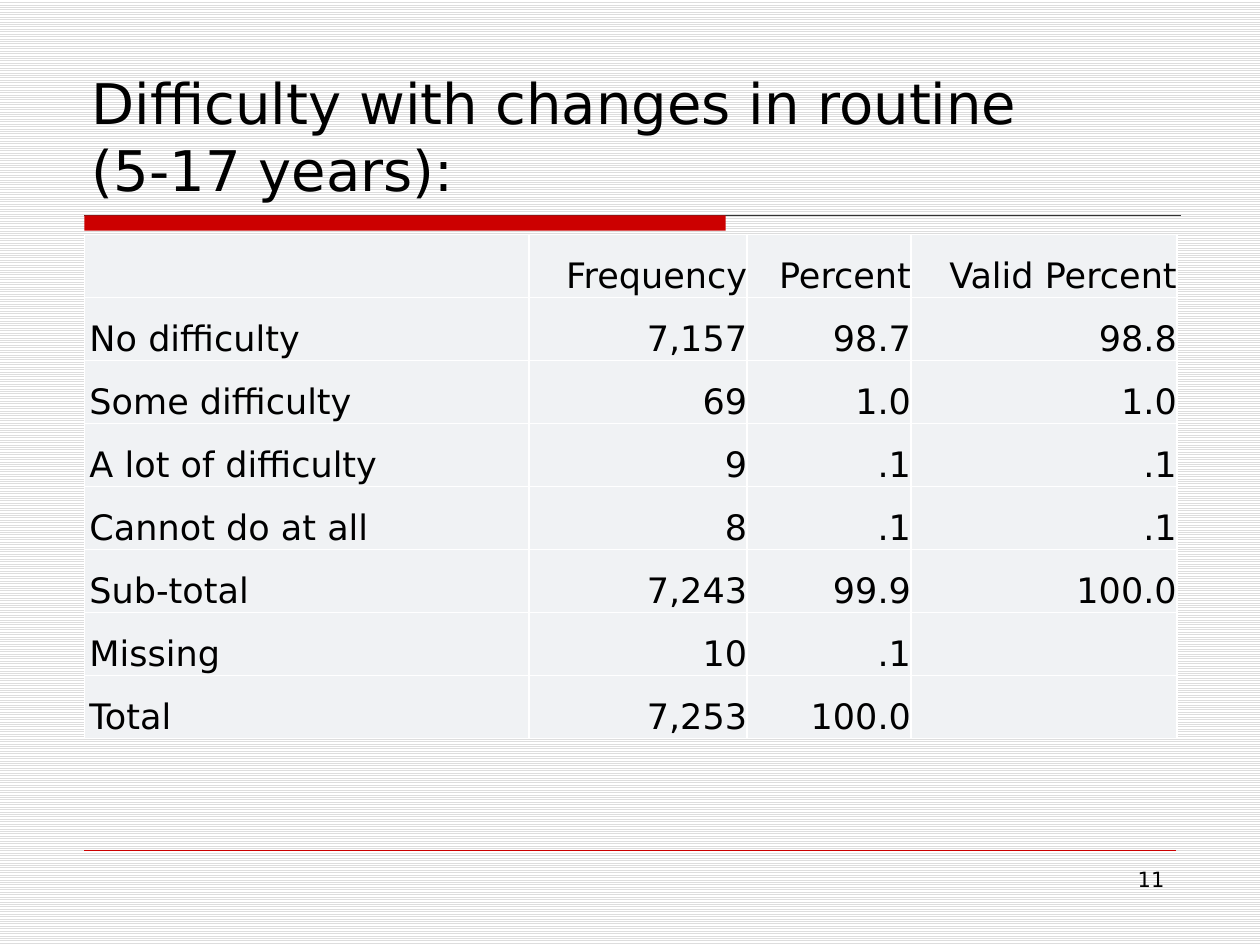
from lxml.etree import SubElement
from pptx import Presentation
from pptx.dml.color import RGBColor
from pptx.enum.dml import MSO_PATTERN
from pptx.enum.shapes import MSO_CONNECTOR, MSO_SHAPE
from pptx.enum.text import MSO_ANCHOR, PP_ALIGN
from pptx.oxml import parse_xml
from pptx.oxml.ns import nsdecls, qn
from pptx.util import Inches, Pt

HUES = {"red": "CC0000", "dark": "333333", "text": "000000", "cell": "F0F2F4",
        "edge": "FFFFFF", "weave": "DDDDDD", "page": "FFFFFF"}
RGB = {name: RGBColor.from_string(hue) for name, hue in HUES.items()}


def write(frame, words, size, form):
    """Put one paragraph in the frame and apply its paragraph format."""
    para = frame.paragraphs[0]
    para.text = words
    for key, value in form.items():
        setattr(para, key, value)
    for run in para.runs:
        for key, value in {"name": "DejaVu Sans", "size": Pt(size)}.items():
            setattr(run.font, key, value)
        run.font.color.rgb = RGB["text"]
    return para


deck = Presentation()
deck.slide_width, deck.slide_height = Inches(10), Inches(7.5)
slide = deck.slides.add_slide(deck.slide_layouts[6])
shapes = slide.shapes

back = slide.background.fill
back.patterned()
back.pattern = MSO_PATTERN.LIGHT_HORIZONTAL
back.fore_color.rgb, back.back_color.rgb = RGB["weave"], RGB["page"]

# Rules under the title and above the page number
for end, top, hue, width in [(9.37, 1.71, "dark", 0.75), (9.33, 6.75, "red", 0.25)]:
    rule = shapes.add_connector(MSO_CONNECTOR.STRAIGHT, Inches(0.67), Inches(top),
                                Inches(end), Inches(top))
    rule.line.color.rgb, rule.line.width = RGB[hue], Pt(width)
    SubElement(rule._element.spPr, qn("a:effectLst"))

bar = shapes.add_shape(MSO_SHAPE.RECTANGLE, Inches(0.67), Inches(1.71),
                       Inches(5.09), Inches(0.12))
bar.shadow.inherit = False
bar.fill.solid()
bar.fill.fore_color.rgb = RGB["red"]
bar.line.fill.background()

# Title and page number
for box, words, size, anchor, align in [
    ((0.63, 0.33, 9.18, 1.33), "Difficulty with changes in routine \v(5-17 years):",
     32, MSO_ANCHOR.BOTTOM, PP_ALIGN.LEFT),
    ((7.17, 6.83, 2.17, 0.52), "11", 12, MSO_ANCHOR.TOP, PP_ALIGN.RIGHT),
]:
    frame = shapes.add_textbox(*map(Inches, box)).text_frame
    frame.word_wrap, frame.vertical_anchor = True, anchor
    write(frame, words, size, {"alignment": align})

# Frequency table
rows = [
    ("", "Frequency", "Percent", "Valid Percent"),
    ("No difficulty", "7,157", "98.7", "98.8"),
    ("Some difficulty", "69", "1.0", "1.0"),
    ("A lot of difficulty", "9", ".1", ".1"),
    ("Cannot do at all", "8", ".1", ".1"),
    ("Sub-total", "7,243", "99.9", "100.0"),
    ("Missing", "10", ".1", ""),
    ("Total", "7,253", "100.0", ""),
]
wide = [3.53, 1.73, 1.3, 2.11]
high = 0.39
space = {"line_spacing": 1.5, "space_before": Pt(6), "space_after": Pt(6)}
inset = {"margin_left": 0, "margin_right": 0, "margin_top": 0, "margin_bottom": 0,
         "vertical_anchor": MSO_ANCHOR.MIDDLE}

table = shapes.add_table(len(rows), len(wide), Inches(0.67), Inches(1.86),
                         Inches(sum(wide)), Inches(high * len(rows))).table
for col, width in zip(table.columns, wide):
    col.width = Inches(width)
for r, row in enumerate(rows):
    table.rows[r].height = Inches(high)
    for c, words in enumerate(row):
        cell = table.cell(r, c)
        for side in ("lnL", "lnR", "lnT", "lnB"):
            cell._tc.get_or_add_tcPr().append(parse_xml(
                f'<a:{side} {nsdecls("a")} w="{Pt(1)}"><a:solidFill>'
                f'<a:srgbClr val="{HUES["edge"]}"/></a:solidFill></a:{side}>'))
        cell.fill.solid()
        cell.fill.fore_color.rgb = RGB["cell"]
        if not words:
            continue
        for key, value in inset.items():
            setattr(cell, key, value)
        align = PP_ALIGN.RIGHT if c else PP_ALIGN.LEFT
        para = write(cell.text_frame, words, 20, {"alignment": align, **space})
        para._p.get_or_add_pPr().set("marL", str(Inches(0.04)))

deck.save("out.pptx")
